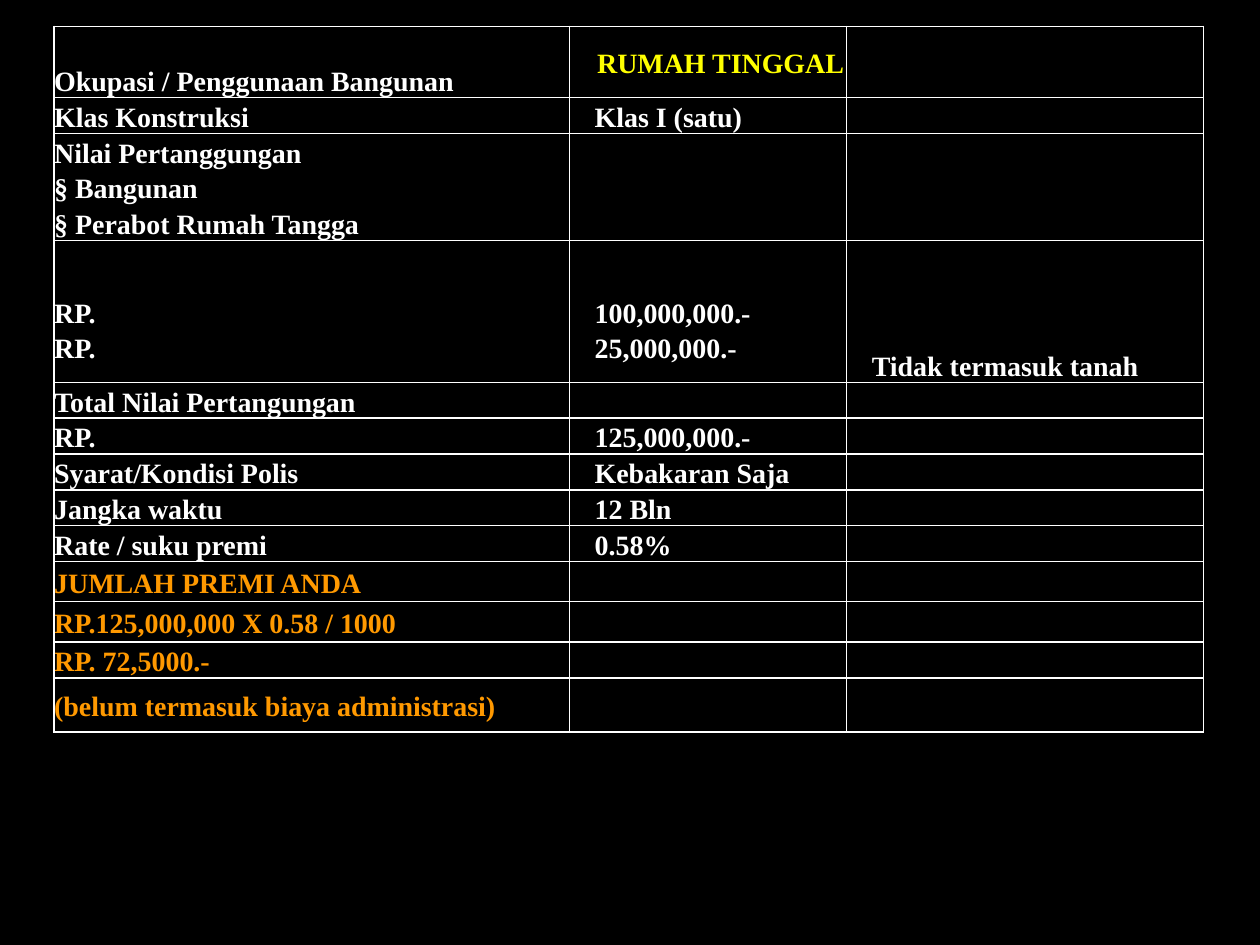
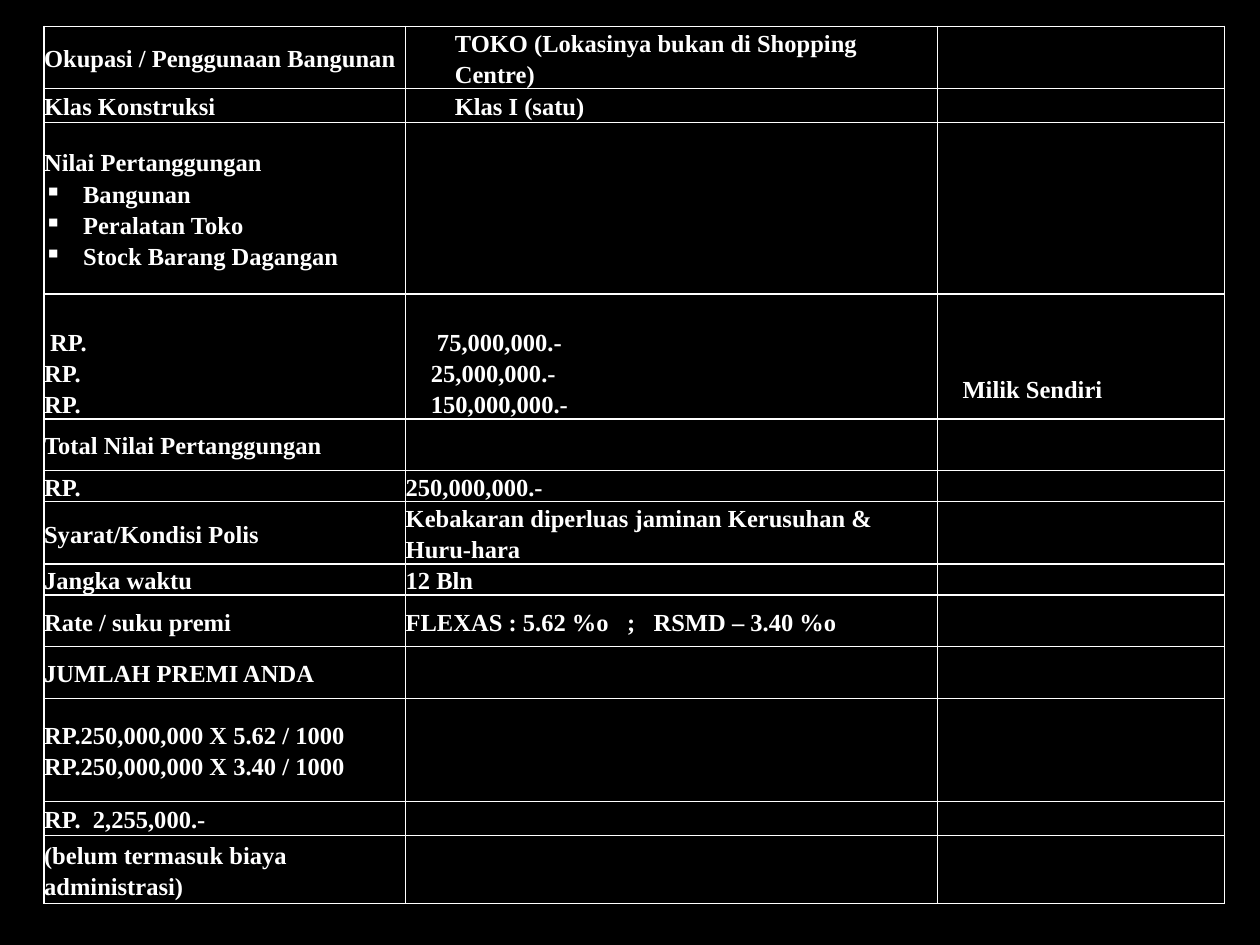
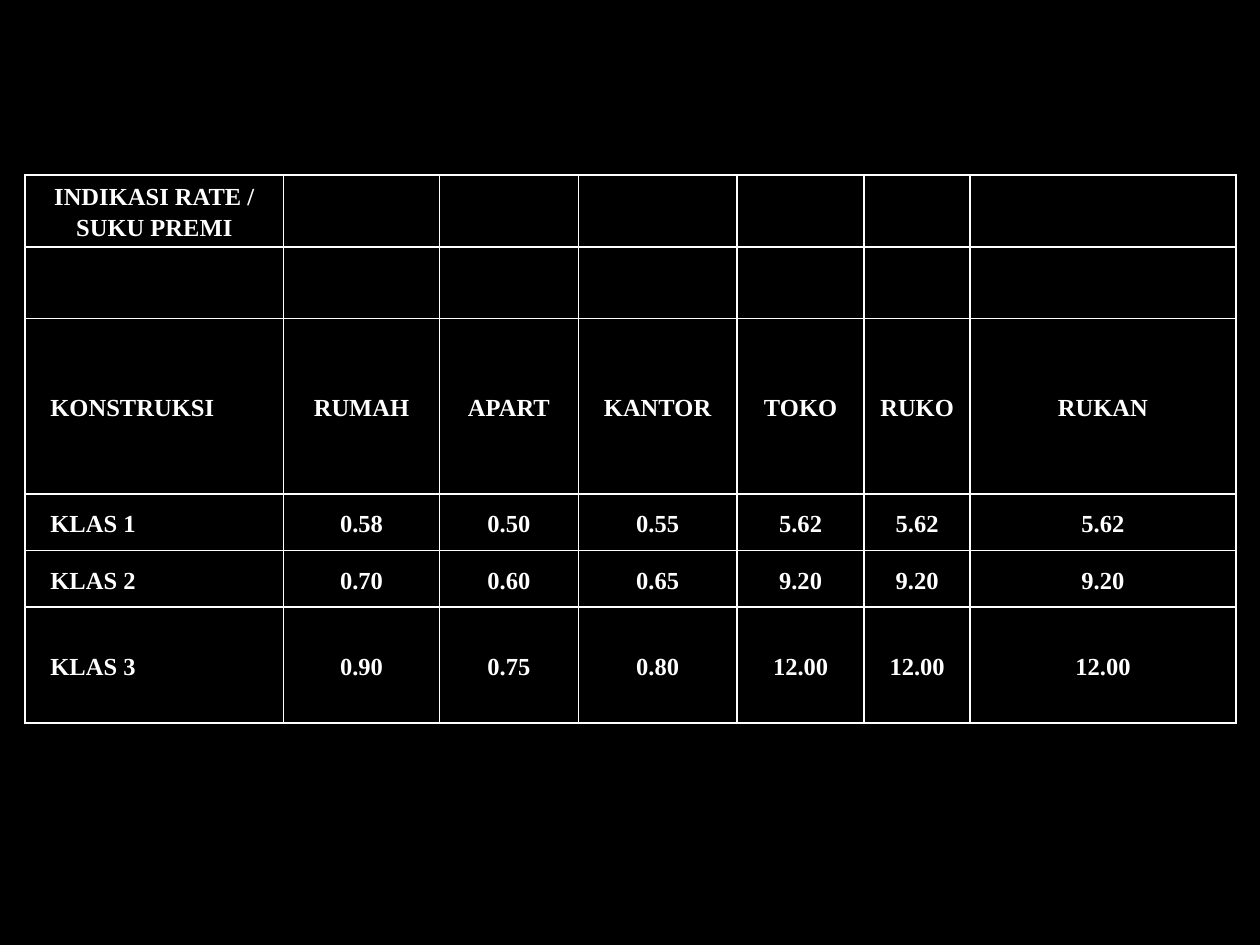
from lxml.etree import SubElement
from pptx import Presentation
from pptx.dml.color import RGBColor
from pptx.enum.text import MSO_ANCHOR, PP_ALIGN
from pptx.oxml.ns import qn
from pptx.util import Inches, Pt

BLACK = RGBColor(0x00, 0x00, 0x00)
WHITE = RGBColor(0xFF, 0xFF, 0xFF)
YELLOW = RGBColor(0xFF, 0xFF, 0x00)
ORANGE = RGBColor(0xFF, 0x99, 0x00)
FONT = "Times New Roman"
LINE_SPACING = 1.15
BORDER_WIDTH = Pt(1)

CENTER = {"align": PP_ALIGN.CENTER}
INDENT = {"indent": 0.2}
DEEP_INDENT = {"indent": 0.39}
PLAIN = {}
PREMIUM = {"color": ORANGE}

HOUSE = {
    "at": (0.43, 0.21, 9.13, 6.02),
    "size": 16,
    "columns": [4.09, 2.2, 2.83],
    "heights": [0.43, 0.21, 0.75, 0.64, 0.21, 0.11, 0.21, 0.19, 0.21, 0.32, 0.32, 0.19, 0.43],
    "rows": [
        ["Okupasi / Penggunaan Bangunan", "RUMAH TINGGAL"],
        ["Klas Konstruksi", "Klas I (satu)"],
        ["Nilai Pertanggungan\n§ Bangunan\n§ Perabot Rumah Tangga"],
        ["RP.\nRP.", "100,000,000.-\n25,000,000.-", "Tidak termasuk tanah"],
        ["Total Nilai Pertangungan"],
        ["RP.", "125,000,000.-"],
        ["Syarat/Kondisi Polis", "Kebakaran Saja"],
        ["Jangka waktu", "12 Bln"],
        ["Rate / suku premi", "0.58%"],
        ["JUMLAH PREMI ANDA"],
        ["RP.125,000,000 X 0.58 / 1000"],
        ["RP. 72,5000.-"],
        ["(belum termasuk biaya administrasi)"],
    ],
    "column_styles": [PLAIN, INDENT, INDENT],
    "cell_styles": {
        (0, 0): {"gap": 0.28},
        (0, 1): {"color": YELLOW, **CENTER},
        (3, 0): {"gap": 0.28},
        (3, 1): {"gap": 0.28},
        (3, 2): {"gap": 0.84},
        **{(row, 0): PREMIUM for row in range(9, 13)},
    },
}

SHOP = {
    "at": (0.35, 0.21, 9.37, 7.18),
    "size": 14,
    "columns": [2.87, 4.22, 2.28],
    "heights": [0.41, 0.27, 1.36, 0.58, 0.41, 0.14, 0.41, 0.24, 0.41, 0.41, 0.82, 0.27, 0.54],
    "rows": [
        ["Okupasi / Penggunaan Bangunan", "TOKO (Lokasinya bukan di Shopping Centre)"],
        ["Klas Konstruksi", "Klas I (satu)"],
        ["Nilai Pertanggungan\nBangunan\nPeralatan Toko\nStock Barang Dagangan"],
        [" RP.\nRP.\nRP.", " 75,000,000.-\n25,000,000.-\n150,000,000.-", "Milik Sendiri"],
        ["Total Nilai Pertanggungan"],
        ["RP.", "250,000,000.-"],
        ["Syarat/Kondisi Polis", "Kebakaran diperluas jaminan Kerusuhan & Huru-hara"],
        ["Jangka waktu", "12 Bln"],
        ["Rate / suku premi", "FLEXAS : 5.62 %o   ;   RSMD – 3.40 %o"],
        ["JUMLAH PREMI ANDA"],
        ["RP.250,000,000 X 5.62 / 1000\nRP.250,000,000 X 3.40 / 1000"],
        ["RP.  2,255,000.-"],
        ["(belum termasuk biaya administrasi)"],
    ],
    "column_styles": [PLAIN, PLAIN, INDENT],
    "cell_styles": {
        (0, 1): DEEP_INDENT,
        (1, 1): DEEP_INDENT,
        (2, 0): {"bullet": "▪"},
        (3, 0): {"gap": 0.25},
        (3, 1): {"gap": 0.25, **INDENT},
        (3, 2): {"gap": 0.5},
    },
}

RATES = {
    "at": (0.2, 1.39, 9.61, 4.34),
    "size": 14,
    "columns": [2.05, 1.24, 1.1, 1.26, 1.01, 0.84, 2.11],
    "heights": [0.57, 0.57, 1.39, 0.45, 0.45, 0.92],
    "rows": [
        ["INDIKASI RATE / SUKU PREMI"],
        [],
        ["KONSTRUKSI", "RUMAH", "APART", "KANTOR", "TOKO", "RUKO", "RUKAN"],
        ["KLAS 1", "0.58", "0.50", "0.55", "5.62", "5.62", "5.62"],
        ["KLAS 2", "0.70", "0.60", "0.65", "9.20", "9.20", "9.20"],
        ["KLAS 3", "0.90", "0.75", "0.80", "12.00", "12.00", "12.00"],
    ],
    "column_styles": [INDENT] + [CENTER] * 6,
    "cell_styles": {(0, 0): {"indent": 0, **CENTER}},
}


def draw_borders(cell):
    properties = cell._tc.get_or_add_tcPr()
    for side in ("a:lnL", "a:lnR", "a:lnT", "a:lnB"):
        line = SubElement(properties, qn(side), w=str(BORDER_WIDTH))
        fill = SubElement(line, qn("a:solidFill"))
        SubElement(fill, qn("a:srgbClr"), val=str(WHITE))


def write_line(para, text, size, style, bullet):
    para.line_spacing = LINE_SPACING
    para.alignment = style.get("align", PP_ALIGN.LEFT)
    properties = para._p.get_or_add_pPr()
    indent = 0.31 if bullet else style.get("indent", 0)
    properties.set("marL", str(Inches(indent)))
    properties.set("indent", str(Inches(-indent if bullet else 0)))
    if bullet:
        SubElement(properties, qn("a:buChar"), char=bullet)
    if not text:
        SubElement(para._p, qn("a:endParaRPr"), sz=str(size * 100))
        return
    span = para.add_run()
    span.text = text
    span.font.color.rgb = style.get("color", WHITE)
    for name, value in {"name": FONT, "size": Pt(size), "bold": True}.items():
        setattr(span.font, name, value)


def fill_cell(cell, text, size, style):
    formats = {
        "margin_left": 0,
        "margin_right": 0,
        "margin_top": Inches(style.get("gap", 0)),
        "margin_bottom": 0,
        "vertical_anchor": MSO_ANCHOR.MIDDLE,
    }
    for name, value in formats.items():
        setattr(cell, name, value)
    draw_borders(cell)
    cell.fill.background()
    frame = cell.text_frame
    for index, line in enumerate(text.split("\n")):
        para = frame.add_paragraph() if index else frame.paragraphs[0]
        write_line(para, line, size, style, style.get("bullet") if index else None)


def add_page(deck, content):
    page = deck.slides.add_slide(deck.slide_layouts[6])
    page.background.fill.solid()
    page.background.fill.fore_color.rgb = BLACK
    left, top, width, height = map(Inches, content["at"])
    columns, heights = content["columns"], content["heights"]
    holder = page.shapes.add_table(len(heights), len(columns), left, top, width, height)
    table = holder.table
    table.first_row = table.horz_banding = False
    for column, length in zip(table.columns, columns):
        column.width = Inches(length)
    for row, length in zip(table.rows, heights):
        row.height = Inches(length)
    holder.height = height
    for row, texts in enumerate(content["rows"]):
        for column, base in enumerate(content["column_styles"]):
            text = texts[column] if column < len(texts) else ""
            style = {**base, **content["cell_styles"].get((row, column), {})}
            fill_cell(table.cell(row, column), text, content["size"], style)


def main():
    deck = Presentation()
    deck.slide_width, deck.slide_height = Inches(10), Inches(7.5)
    for content in (HOUSE, SHOP, RATES):
        add_page(deck, content)
    deck.save("out.pptx")


if __name__ == "__main__":
    main()
